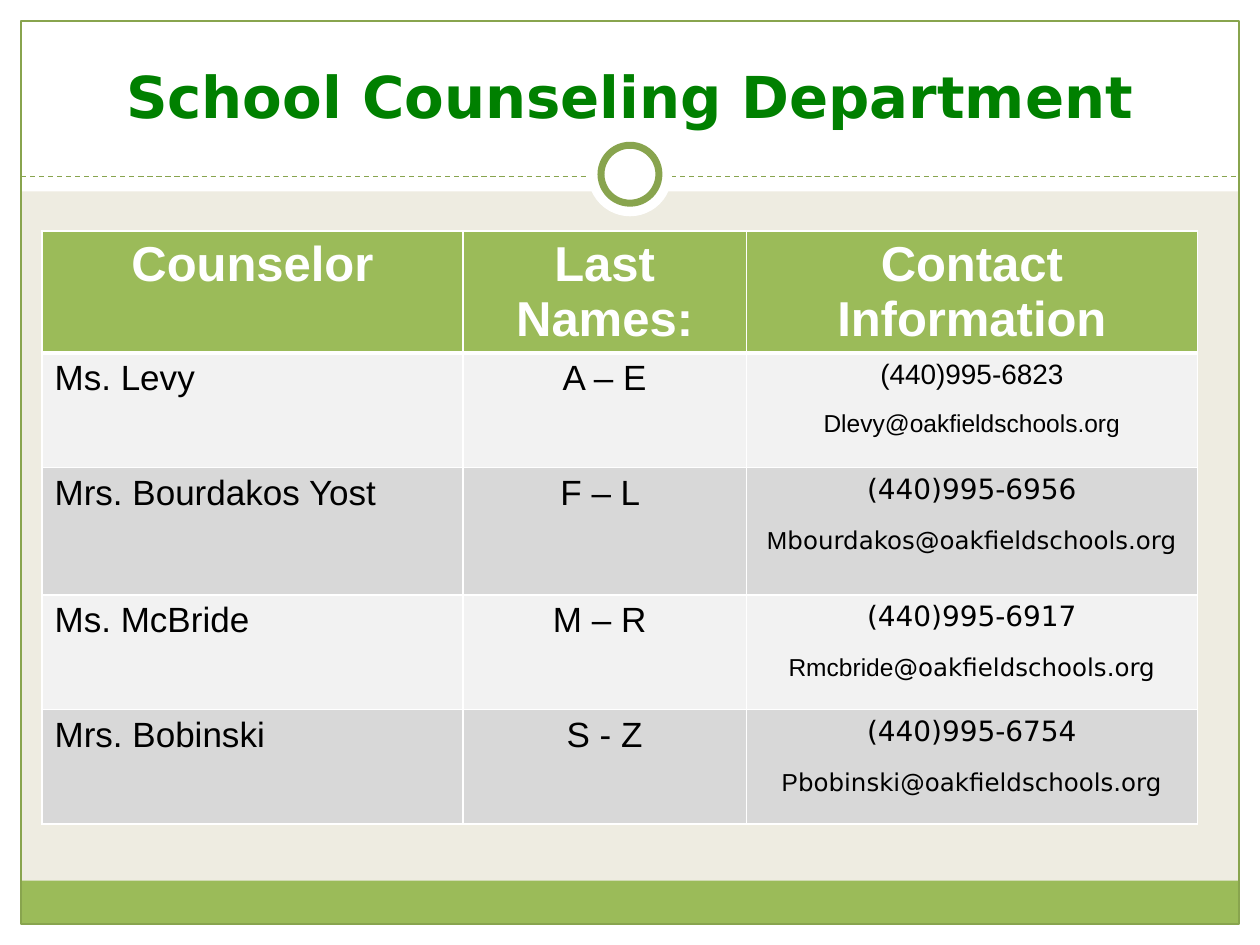
from lxml.etree import SubElement
from pptx import Presentation
from pptx.dml.color import RGBColor
from pptx.enum.dml import MSO_LINE
from pptx.enum.shapes import MSO_CONNECTOR, MSO_SHAPE
from pptx.enum.text import MSO_ANCHOR, PP_ALIGN
from pptx.oxml.ns import qn
from pptx.util import Inches, Pt

WHITE, GREEN, OLIVE, SAND = "FFFFFF", "9BBB59", "88A44E", "EEECE1"
ARIAL, DEJAVU = "Arial", "DejaVu Sans"
DOMAIN = "@oakfieldschools.org"


def color(code):
    return RGBColor.from_string(code)


def unit(count):
    return Inches(count / 6)


def write(para, text, size=20, font=ARIAL, ink="000000", bold=False, align=PP_ALIGN.CENTER):
    para.alignment = align
    run = para.add_run()
    run.text = text
    run.font.size, run.font.name, run.font.bold = Pt(size), font, bold
    run.font.color.rgb = color(ink)


class Page:
    def __init__(self, deck):
        self.slide = deck.slides.add_slide(deck.slide_layouts[5])
        self.shapes = self.slide.shapes
        fill = self.slide.background.fill
        fill.solid()
        fill.fore_color.rgb = color(SAND)

    def shape(self, box, fill=None, line=None, width=0.75, kind=MSO_SHAPE.RECTANGLE):
        item = self.shapes.add_shape(kind, *map(unit, box))
        item.shadow.inherit = False
        if fill:
            item.fill.solid()
            item.fill.fore_color.rgb = color(fill)
        else:
            item.fill.background()
        if line:
            item.line.color.rgb = color(line)
            item.line.width = Pt(width)
        else:
            item.line.fill.background()

    def rule(self, left, right, top):
        item = self.shapes.add_connector(
            MSO_CONNECTOR.STRAIGHT, unit(left), unit(top), unit(right), unit(top))
        item.line.color.rgb = color(OLIVE)
        item.line.width = Pt(0.75)
        item.line.dash_style = MSO_LINE.DASH
        SubElement(item._element.spPr, qn("a:effectLst"))

    def title(self, box, text):
        item = self.shapes.title
        item.left, item.top, item.width, item.height = map(unit, box)
        item.text_frame.vertical_anchor = MSO_ANCHOR.BOTTOM
        write(item.text_frame.paragraphs[0], text, size=33, font=DEJAVU, ink="008000", bold=True)
        self.shapes._spTree.append(item._element)

    def edge(self, cell, side, width):
        line = SubElement(cell._tc.get_or_add_tcPr(), qn(f"a:ln{side}"), w=str(Pt(width)))
        paint = SubElement(line, qn("a:solidFill"))
        SubElement(paint, qn("a:srgbClr"), val=WHITE)

    def cell(self, cell, row):
        for side in "LRTB":
            thick = (row, side) in ((0, "B"), (1, "T"))
            self.edge(cell, side, 3 if thick else 1)
        cell.fill.solid()
        cell.fill.fore_color.rgb = color(GREEN if row == 0 else "F2F2F2" if row % 2 else "D8D8D8")
        return cell.text_frame

    def table(self, left, top, cols, rows, heads, staff):
        grid = self.shapes.add_table(
            len(rows), len(cols), unit(left), unit(top),
            Inches(sum(cols)), Inches(sum(rows))).table
        for col, width in zip(grid.columns, cols):
            col.width = Inches(width)
        for row, height in zip(grid.rows, rows):
            row.height = Inches(height)
        for col, head in enumerate(heads):
            frame = self.cell(grid.cell(0, col), 0)
            write(frame.paragraphs[0], head, size=28, ink=WHITE, bold=True)
        for row, (name, span, phone, font, start, rest) in enumerate(staff, 1):
            who, range_, reach = (self.cell(grid.cell(row, col), row) for col in range(3))
            write(who.paragraphs[0], name, align=PP_ALIGN.LEFT)
            write(range_.paragraphs[0], span)
            write(reach.paragraphs[0], phone, size=16, font=font)
            mail = reach.add_paragraph()
            mail.space_before = Pt(11.5)
            write(mail, start, size=14)
            write(mail, rest + DOMAIN, size=14, font=font)


def main():
    deck = Presentation()
    deck.slide_width, deck.slide_height = unit(60), unit(45)
    page = Page(deck)
    for box in ((0, 44, 60, 1), (0, 0, 60, 9.12), (0, 0, 1, 45), (59, 0, 1, 45)):
        page.shape(box, fill=WHITE)
    page.shape((1, 41.94, 58, 2.06), fill=GREEN)
    page.shape((1, 1, 58, 43), line=OLIVE)
    page.rule(1, 59, 8.4)
    page.shape((28, 6.3, 4, 4), fill=WHITE, kind=MSO_SHAPE.OVAL)
    page.shape((28.62, 6.92, 2.76, 2.76), fill=WHITE, line=OLIVE, width=4, kind=MSO_SHAPE.OVAL)
    page.title((2, 1.5, 56, 5), "School Counseling Department")
    page.table(
        2, 11, (3.34, 2.25, 3.58), (0.91, 0.91, 1.01, 0.91, 0.91),
        ("Counselor", "Last Names:", "Contact Information"),
        (("Ms. Levy", "A – E", "(440)995-6823", ARIAL, "D", "levy"),
         ("Mrs. Bourdakos Yost", "F – L ", "(440)995-6956", DEJAVU, "M", "bourdakos"),
         ("Ms. McBride", "M – R ", "(440)995-6917", DEJAVU, "Rmcbride", ""),
         ("Mrs. Bobinski", "S - Z", "(440)995-6754", DEJAVU, "P", "bobinski")))
    deck.save("out.pptx")


if __name__ == "__main__":
    main()
